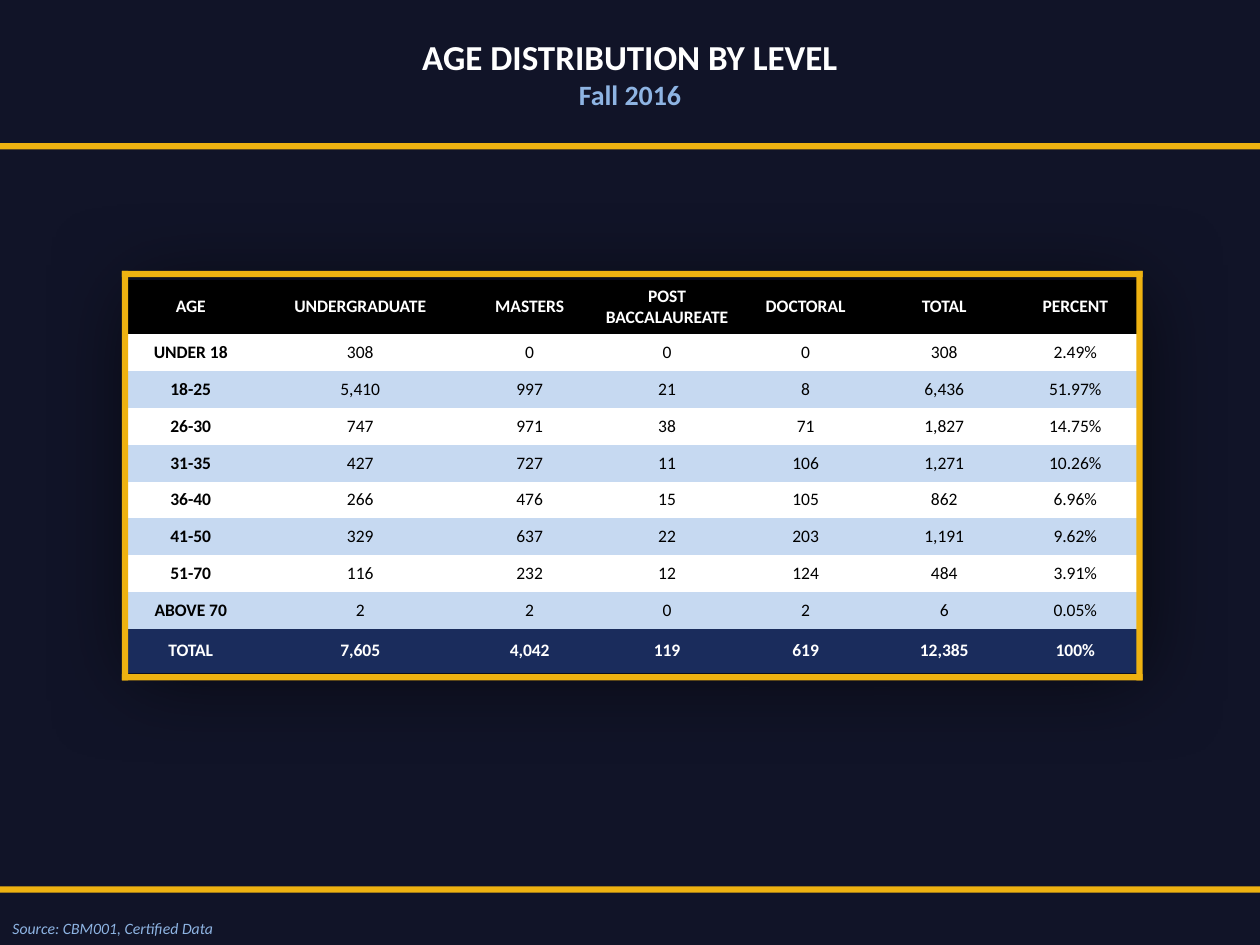
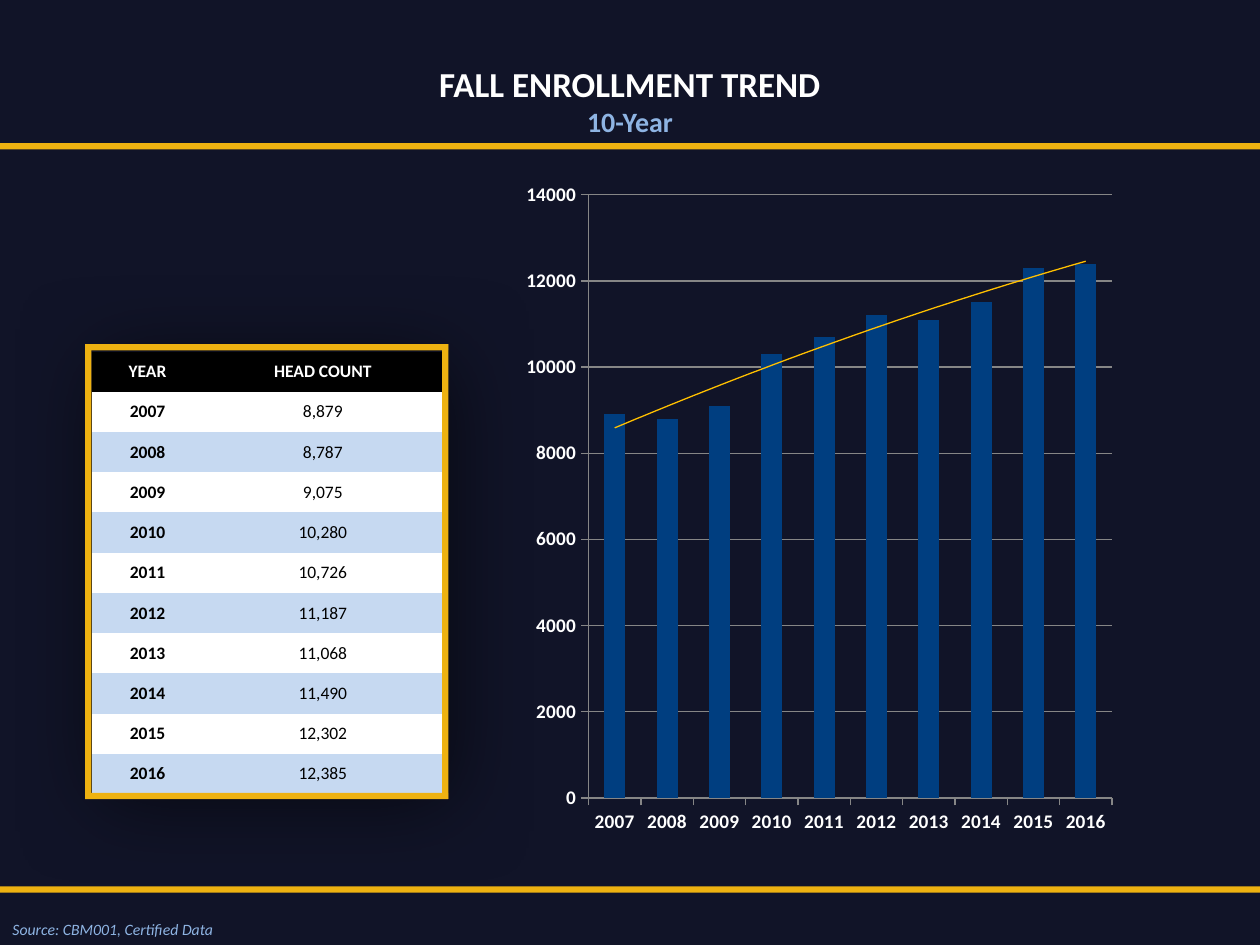
import dataclasses

import lxml.etree
import pptx
import pptx.chart.data
import pptx.dml.color
import pptx.enum.chart
import pptx.enum.shapes
import pptx.enum.text
import pptx.oxml
import pptx.oxml.ns
import pptx.util

Pt = pptx.util.Pt
ALIGN = pptx.enum.text.PP_ALIGN
ANCHOR = pptx.enum.text.MSO_ANCHOR

FONT = "Calibri"
COLOURS = {
    "background": "111428", "gold": "EEB211", "white": "FFFFFF", "black": "000000",
    "sky": "8EB4E3", "stripe": "C6D9F1", "navy": "1A2C5C",
    "column": "003E80", "trend": "FFC000", "grid": "868686",
}
SLIDE_WIDTH, SLIDE_HEIGHT = 720, 540
BAR = 3.6
BAND_TOPS = (81.8, 506.5)
NO_STYLE_ID = "{2D5ABB26-0587-4C30-8999-92F81FD0307C}"
SOURCE = "Source: CBM001, Certified Data"

AGE_ROWS = [
    ("AGE", "UNDERGRADUATE", "MASTERS", "POST BACCALAUREATE", "DOCTORAL", "TOTAL", "PERCENT"),
    ("UNDER 18", "308", "0", "0", "0", "308", "2.49%"),
    ("18-25", "5,410", "997", "21", "8", "6,436", "51.97%"),
    ("26-30", "747", "971", "38", "71", "1,827", "14.75%"),
    ("31-35", "427", "727", "11", "106", "1,271", "10.26%"),
    ("36-40", "266", "476", "15", "105", "862", "6.96%"),
    ("41-50", "329", "637", "22", "203", "1,191", "9.62%"),
    ("51-70", "116", "232", "12", "124", "484", "3.91%"),
    ("ABOVE 70", "2", "2", "0", "2", "6", "0.05%"),
    ("TOTAL", "7,605", "4,042", "119", "619", "12,385", "100%"),
]
HEAD_COUNTS = {
    "2007": 8879, "2008": 8787, "2009": 9075, "2010": 10280, "2011": 10726,
    "2012": 11187, "2013": 11068, "2014": 11490, "2015": 12302, "2016": 12385,
}


@dataclasses.dataclass
class Box:
    left: float
    top: float
    width: float
    height: float

    def lengths(self) -> tuple:
        return tuple(Pt(value) for value in dataclasses.astuple(self))


@dataclasses.dataclass
class FramedTable:
    rows: list
    left: float
    top: float
    column_widths: list
    row_heights: list
    inset: float
    frame: Box
    has_total: bool = False


def rgb(colour: str) -> pptx.dml.color.RGBColor:
    return pptx.dml.color.RGBColor.from_string(COLOURS[colour])


def write(paragraph, text: str, *, size: float, colour: str, bold: bool = False,
          italic: bool = False, align=ALIGN.LEFT) -> None:
    paragraph.alignment = align
    run = paragraph.add_run()
    run.text = text
    font = run.font
    font.name, font.size, font.bold, font.italic = FONT, Pt(size), bold, italic
    font.color.rgb = rgb(colour)


def add_bar(slide, box: Box) -> None:
    bar = slide.shapes.add_shape(pptx.enum.shapes.MSO_SHAPE.RECTANGLE, *box.lengths())
    bar.shadow.inherit = False
    bar.fill.solid()
    bar.fill.fore_color.rgb = rgb("gold")
    bar.line.fill.background()


def add_page(deck, heading: str, subheading: str, title_top: float, source_top: float):
    slide = deck.slides.add_slide(deck.slide_layouts[5])

    # Two-line title
    title = slide.shapes.title
    title.left, title.top, title.width, title.height = Box(0, title_top, SLIDE_WIDTH, 72.7).lengths()
    words = title.text_frame
    words.auto_size = pptx.enum.text.MSO_AUTO_SIZE.NONE
    words.vertical_anchor = ANCHOR.TOP
    write(words.paragraphs[0], heading, size=20, colour="white", bold=True, align=ALIGN.CENTER)
    write(words.add_paragraph(), subheading, size=16, colour="sky", bold=True, align=ALIGN.CENTER)

    # Bands and source line
    for band_top in BAND_TOPS:
        add_bar(slide, Box(0, band_top, SLIDE_WIDTH, BAR))
    source = slide.shapes.add_textbox(*Box(0, source_top, 131, 18).lengths())
    source.text_frame.word_wrap = False
    write(source.text_frame.paragraphs[0], SOURCE, size=9, colour="sky", italic=True)
    return slide


def add_table_shadow(table) -> None:
    properties = table._tbl.tblPr
    properties.find(pptx.oxml.ns.qn("a:tableStyleId")).text = NO_STYLE_ID
    properties.insert(0, pptx.oxml.parse_xml(
        f'<a:effectLst {pptx.oxml.ns.nsdecls("a")}>'
        f'<a:outerShdw blurRad="{Pt(50)}" dist="{Pt(6)}" dir="2700000" algn="ctr" rotWithShape="0">'
        '<a:srgbClr val="000000"><a:alpha val="60000"/></a:srgbClr>'
        '</a:outerShdw></a:effectLst>'))


def add_framed_table(slide, data: FramedTable) -> None:
    size = Box(data.left, data.top, sum(data.column_widths), sum(data.row_heights))
    table = slide.shapes.add_table(len(data.rows), len(data.column_widths), *size.lengths()).table
    add_table_shadow(table)
    for column, width in zip(table.columns, data.column_widths):
        column.width = Pt(width)
    for row, height in zip(table.rows, data.row_heights):
        row.height = Pt(height)

    for r, values in enumerate(data.rows):
        is_total = data.has_total and r == len(data.rows) - 1
        emphasised = r == 0 or is_total
        if r == 0:
            fill = "black"
        elif is_total:
            fill = "navy"
        else:
            fill = "white" if r % 2 else "stripe"
        for c, value in enumerate(values):
            cell = table.cell(r, c)
            cell.fill.solid()
            cell.fill.fore_color.rgb = rgb(fill)
            cell.vertical_anchor = ANCHOR.MIDDLE
            cell.margin_left = cell.margin_right = Pt(data.inset)
            cell.margin_top = cell.margin_bottom = Pt(data.inset)
            write(cell.text_frame.paragraphs[0], value, size=10, bold=emphasised or c == 0,
                  colour="white" if emphasised else "black", align=ALIGN.CENTER)

    # Gold frame
    frame = data.frame
    for top in (frame.top, frame.top + frame.height - BAR):
        add_bar(slide, Box(frame.left, top, frame.width, BAR))
    for left in (frame.left, frame.left + frame.width - BAR):
        add_bar(slide, Box(left, frame.top, BAR, frame.height))


def add_trend_line(series) -> None:
    trend = pptx.oxml.parse_xml(
        f'<c:trendline {pptx.oxml.ns.nsdecls("c", "a")}>'
        f'<c:spPr><a:ln w="{Pt(0.75)}"><a:solidFill><a:srgbClr val="{COLOURS["trend"]}"/>'
        '</a:solidFill></a:ln></c:spPr>'
        '<c:trendlineType val="poly"/><c:order val="2"/>'
        '<c:dispRSqr val="0"/><c:dispEq val="0"/></c:trendline>')
    series._element.find(pptx.oxml.ns.qn("c:cat")).addprevious(trend)


def set_plot_area(chart, **fractions: float) -> None:
    area = chart._chartSpace.chart.plotArea
    for old in area.findall(pptx.oxml.ns.qn("c:layout")):
        area.remove(old)
    layout = lxml.etree.SubElement(area, pptx.oxml.ns.qn("c:layout"))
    area.insert(0, layout)
    manual = lxml.etree.SubElement(layout, pptx.oxml.ns.qn("c:manualLayout"))
    settings = {"layoutTarget": "inner", "xMode": "edge", "yMode": "edge", **fractions}
    for tag, value in settings.items():
        lxml.etree.SubElement(manual, pptx.oxml.ns.qn(f"c:{tag}")).set("val", str(value))


def add_enrollment_chart(slide, box: Box) -> None:
    data = pptx.chart.data.CategoryChartData()
    data.categories = list(HEAD_COUNTS)
    data.add_series("Series 1", [round(count, -2) for count in HEAD_COUNTS.values()])
    chart = slide.shapes.add_chart(
        pptx.enum.chart.XL_CHART_TYPE.COLUMN_CLUSTERED, *box.lengths(), data).chart
    chart.has_title = chart.has_legend = False
    chart.font.name, chart.font.size = FONT, Pt(18)

    # Columns and trend
    plot = chart.plots[0]
    plot.gap_width = 150
    plot.vary_by_categories = False
    columns = plot.series[0]
    columns.format.fill.solid()
    columns.format.fill.fore_color.rgb = rgb("column")
    add_trend_line(columns)

    # Axes
    for axis in (chart.category_axis, chart.value_axis):
        labels = axis.tick_labels.font
        labels.name, labels.size, labels.bold = FONT, Pt(11), True
        labels.color.rgb = rgb("white")
        axis.major_tick_mark = pptx.enum.chart.XL_TICK_MARK.OUTSIDE
        axis.format.line.color.rgb = rgb("grid")
        axis.format.line.width = Pt(0.75)
    counts = chart.value_axis
    counts.minimum_scale, counts.maximum_scale, counts.major_unit = 0, 14000, 2000
    counts.tick_labels.number_format = "General"
    counts.tick_labels.number_format_is_linked = False
    counts.has_major_gridlines = True
    counts.major_gridlines.format.line.color.rgb = rgb("grid")
    counts.major_gridlines.format.line.width = Pt(0.75)
    set_plot_area(chart, x=0.105, y=0.015, w=0.681, h=0.874)


def main() -> None:
    deck = pptx.Presentation()
    deck.slide_width, deck.slide_height = Pt(SLIDE_WIDTH), Pt(SLIDE_HEIGHT)
    backdrop = deck.slide_master.background.fill
    backdrop.solid()
    backdrop.fore_color.rgb = rgb("background")

    # Age distribution
    age_page = add_page(deck, "AGE DISTRIBUTION BY LEVEL", "Fall 2016",
                        title_top=16.6, source_top=521.2)
    add_framed_table(age_page, FramedTable(
        AGE_ROWS, left=70.1, top=159.8,
        column_widths=[77.8, 115.9, 77.8, 79.2, 79.2, 79.2, 70.5],
        row_heights=[28.8] + [21.06] * 8 + [25.3], inset=3.6,
        frame=Box(69.7, 154.8, 583.3, 234), has_total=True))

    # Enrollment trend
    trend_page = add_page(deck, "FALL ENROLLMENT TREND", "10-Year",
                          title_top=32.1, source_top=522.1)
    yearly_rows = [("YEAR", "HEAD COUNT")]
    yearly_rows += [(year, f"{count:,}") for year, count in HEAD_COUNTS.items()]
    add_framed_table(trend_page, FramedTable(
        yearly_rows, left=52.4, top=200.9, column_widths=[63.8, 136.5],
        row_heights=[23] * len(yearly_rows), inset=2.9,
        frame=Box(48.7, 196.6, 207.5, 260)))
    add_enrollment_chart(trend_page, Box(290.2, 104.5, 439.2, 395.3))

    deck.save("out.pptx")


if __name__ == "__main__":
    main()
